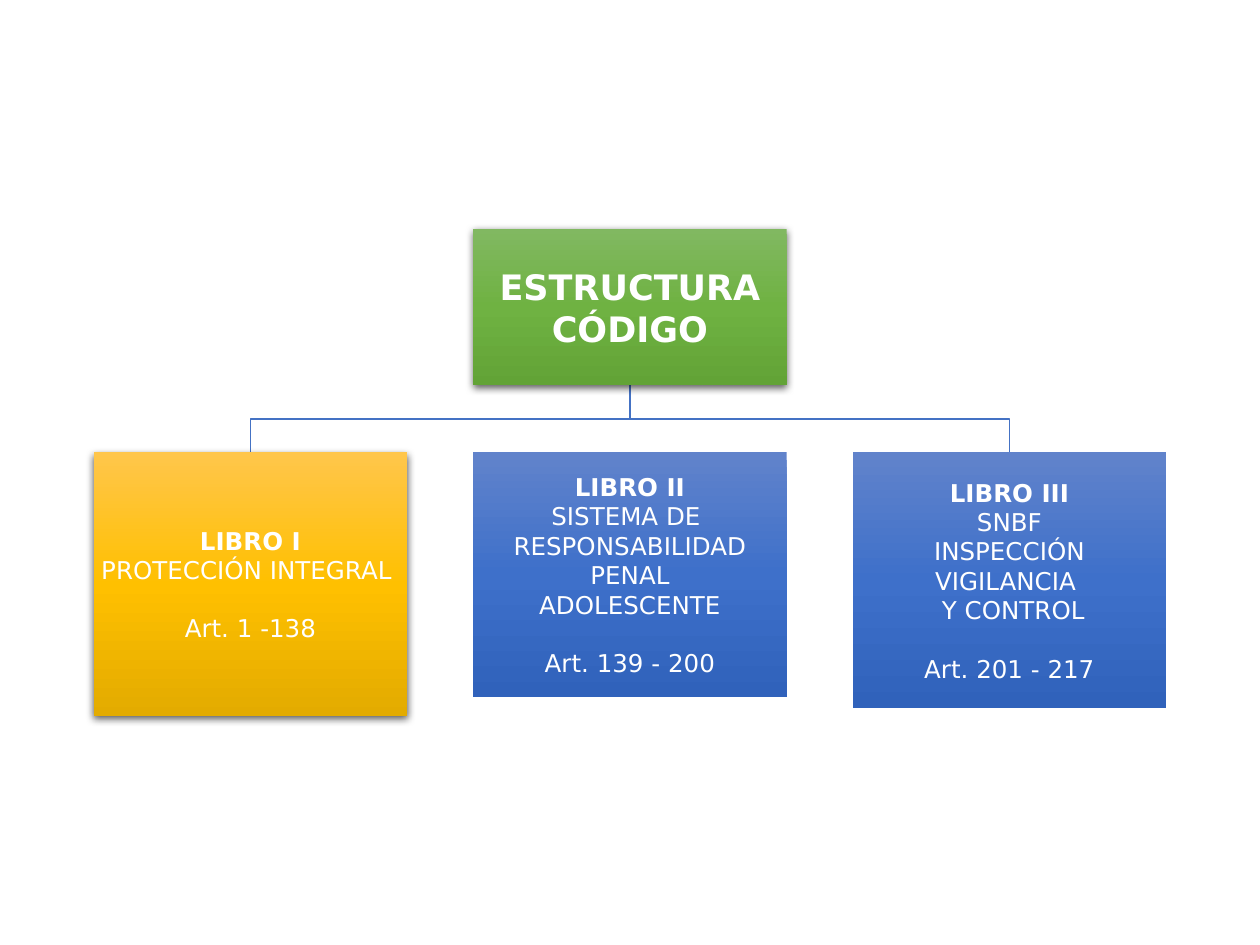
from copy import deepcopy

from lxml import etree
from pptx import Presentation
from pptx.dml.color import RGBColor
from pptx.enum.shapes import MSO_SHAPE
from pptx.enum.text import MSO_ANCHOR, PP_ALIGN
from pptx.oxml.ns import qn
from pptx.util import Cm, Pt

RECT = MSO_SHAPE.RECTANGLE
MIDDLE = MSO_ANCHOR.MIDDLE
CENTER = PP_ALIGN.CENTER

GREEN = ("81B861", "6FB242", "62A336")
YELLOW = ("FFC64B", "FFC000", "E3AB00")
BLUE = ("6183CB", "3E70CA", "3062BB")


def rgb(value):
    return RGBColor.from_string(value)


class OrgChart:
    font = "DejaVu Sans"
    text_color = "FFFFFF"
    line_color = "4472C4"

    def __init__(self, slide):
        self.s = slide

    def gradient(self, sp, colors):
        sp.fill.gradient()
        sp.fill.gradient_angle = 270
        stop_list = sp._element.spPr.find(".//" + qn("a:gsLst"))
        stop_list.insert(1, deepcopy(stop_list[0]))
        for i, (stop, color) in enumerate(zip(sp.fill.gradient_stops, colors)):
            stop.position = i / 2
            stop.color.rgb = rgb(color)

    def shadow(self, sp):
        effects = sp._element.spPr.find(qn("a:effectLst"))
        outer = etree.SubElement(effects, qn("a:outerShdw"), blurRad=str(Pt(4.5)),
                                 dist=str(Pt(1.5)), dir="5400000", algn="ctr", rotWithShape="0")
        color = etree.SubElement(outer, qn("a:srgbClr"), val="000000")
        etree.SubElement(color, qn("a:alpha"), val="63000")

    def box(self, x, y, w, h, colors, lines, size, bold_lines=1, margin=0.03,
            shadow=False, last_gap=0):
        sp = self.s.shapes.add_shape(RECT, Cm(x), Cm(y), Cm(w), Cm(h))
        sp.shadow.inherit = False
        sp.line.fill.background()
        self.gradient(sp, colors)
        if shadow:
            self.shadow(sp)
        tf = sp.text_frame
        tf.word_wrap = True
        tf.vertical_anchor = MIDDLE
        tf.margin_left = tf.margin_right = tf.margin_top = tf.margin_bottom = Cm(margin)
        tf.text = "\n".join(lines)
        for i, p in enumerate(tf.paragraphs):
            p.alignment = CENTER
            for r in p.runs:
                r.font.name = self.font
                r.font.size = Pt(size)
                r.font.bold = i < bold_lines
                r.font.color.rgb = rgb(self.text_color)
        p.space_before = Pt(last_gap)

    def branch(self, x1, y1, x2, y2):
        mid = (y1 + y2) / 2
        builder = self.s.shapes.build_freeform(Cm(x1), Cm(y1))
        builder.add_line_segments([(Cm(x), Cm(y)) for x, y in ((x1, mid), (x2, mid), (x2, y2))],
                                  close=False)
        sp = builder.convert_to_shape()
        sp.shadow.inherit = False
        sp.fill.background()
        sp.line.color.rgb = rgb(self.line_color)
        sp.line.width = Pt(1)


def main():
    prs = Presentation()
    prs.slide_width, prs.slide_height = Cm(25.4), Cm(19.05)
    chart = OrgChart(prs.slides.add_slide(prs.slide_layouts[6]))

    # Grid: three columns centred on the slide
    box_w, step, center = 6.32, 7.65, 12.7
    root_y, root_h, book_y = 4.62, 3.15, 9.12
    columns = [center + i * step for i in (-1, 0, 1)]

    # Branches to the outer books
    for x in (columns[2], columns[0]):
        chart.branch(center, root_y + root_h, x, book_y)

    # Root
    chart.box(center - box_w / 2, root_y, box_w, root_h, GREEN,
              ["ESTRUCTURA", "CÓDIGO"], 20, bold_lines=2, margin=0.05, shadow=True)

    # Books: height, colours, shadow, lines
    books = [
        (5.32, YELLOW, True, ["LIBRO I", "PROTECCIÓN INTEGRAL ", "Art. 1 -138"]),
        (4.93, BLUE, False, ["LIBRO II", "SISTEMA DE ", "RESPONSABILIDAD", "PENAL",
                             "ADOLESCENTE", "Art. 139 - 200"]),
        (5.16, BLUE, False, ["LIBRO III", "SNBF", "INSPECCIÓN", "VIGILANCIA ",
                             " Y CONTROL", "Art. 201 - 217"]),
    ]
    for x, (h, colors, shadow, lines) in zip(columns, books):
        chart.box(x - box_w / 2, book_y, box_w, h, colors, lines, 14,
                  shadow=shadow, last_gap=16.5)

    prs.save("out.pptx")


if __name__ == "__main__":
    main()
